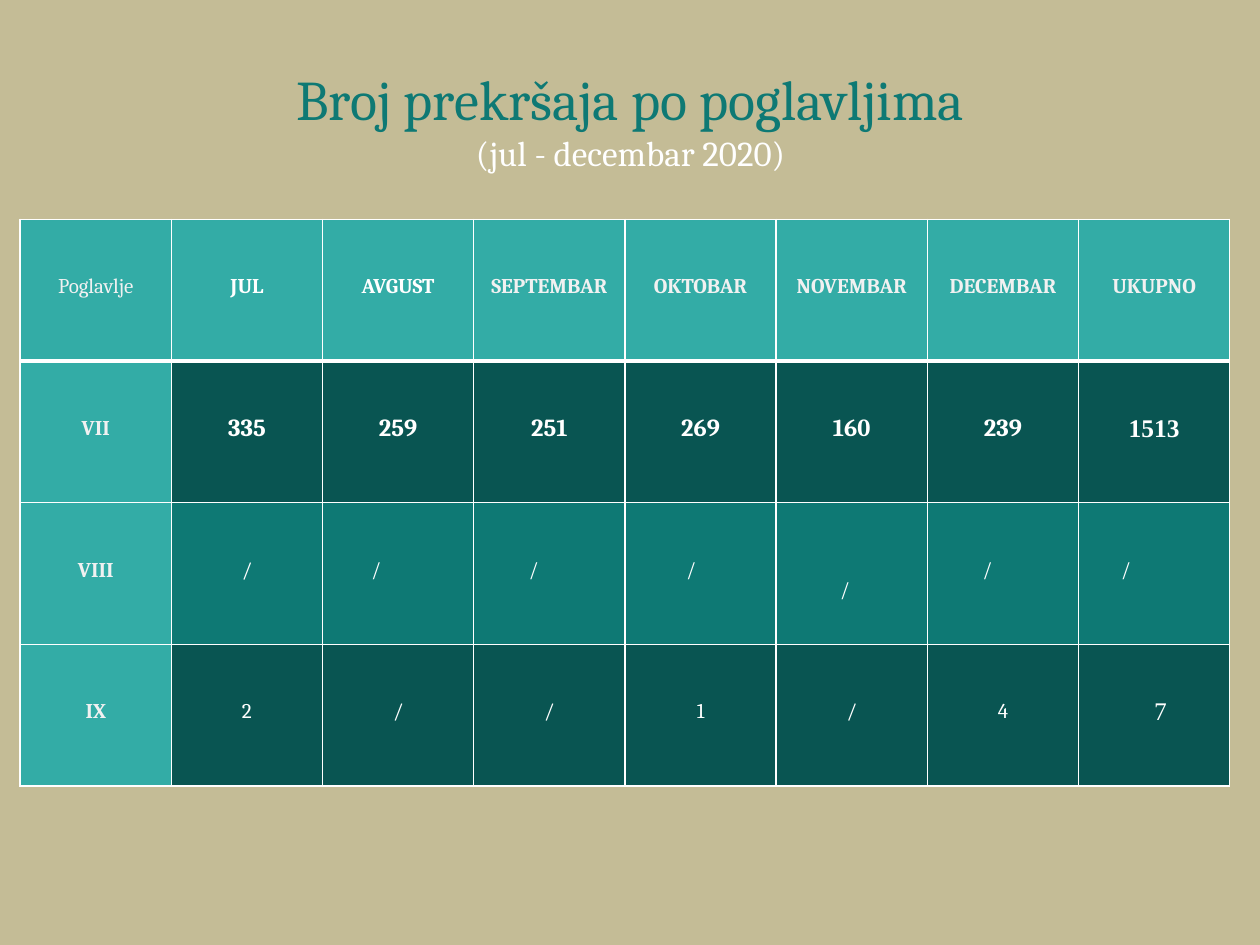
"""Build the slide with the number of offences by chapter, July to December 2020."""
from lxml import etree
from pptx import Presentation
from pptx.dml.color import RGBColor
from pptx.enum.text import MSO_ANCHOR, MSO_AUTO_SIZE, PP_ALIGN
from pptx.oxml.ns import qn
from pptx.util import Inches, Pt

CENTER, LEFT = PP_ALIGN.CENTER, PP_ALIGN.LEFT
TOP, MIDDLE = MSO_ANCHOR.TOP, MSO_ANCHOR.MIDDLE
TITLE_ONLY = 5

COLORS = {
    "sand": "C4BC96",
    "teal": "0E7974",
    "dark": "095552",
    "light": "33ACA6",
    "white": "FFFFFF",
    "soft": "F1F1F1",
}
HEADER = ["Poglavlje", "JUL", "AVGUST", "SEPTEMBAR", "OKTOBAR",
          "NOVEMBAR", "DECEMBAR", "UKUPNO"]
CHAPTERS = [
    ["VII", "335", "259", "251", "269", "160", "239", "1513"],
    ["VIII", "/", "/", "/", "/", "/", "/", "/"],
    ["IX", "2", "/", "/", "1", "/", "4", "7"],
]
BODY_FILLS = ["dark", "teal", "dark"]
INDENTS = {(2, 2): 0.4, (2, 3): 0.45, (2, 4): 0.5, (2, 5): 0.52,
           (2, 6): 0.45, (2, 7): 0.35, (3, 7): 0.6}
DROPS = {(2, 5): 0.33}


def rgb(name):
    return RGBColor.from_string(COLORS[name])


def write(paragraph, text, color, align=CENTER, **font_values):
    """Put formatted text into a paragraph."""
    paragraph.alignment = align
    run = paragraph.add_run()
    run.text = text
    run.font.color.rgb = rgb(color)
    for name, value in font_values.items():
        setattr(run.font, name, value)


def add_title(slide):
    """Place the heading and the period below it."""
    title = slide.shapes.title
    place = {"left": 2.2, "top": 0.5, "width": 5.61, "height": 0.9}
    for name, value in place.items():
        setattr(title, name, Inches(value))
    frame = title.text_frame
    layout = {"margin_left": 0, "margin_right": 0, "margin_top": Inches(0.01),
              "margin_bottom": 0, "vertical_anchor": TOP, "word_wrap": True,
              "auto_size": MSO_AUTO_SIZE.NONE}
    for name, value in layout.items():
        setattr(frame, name, value)
    write(frame.paragraphs[0], "Broj prekršaja po poglavljima", "teal",
          name="Cambria", size=Pt(32))
    write(frame.add_paragraph(), "(jul - decembar 2020)", "white",
          name="Cambria", size=Pt(20))


def set_borders(cell, row):
    """Rule the cell in white, heavier under the header row."""
    widths = {"a:lnL": 1, "a:lnR": 1, "a:lnT": 3 if row == 1 else 1,
              "a:lnB": 3 if row == 0 else 1}
    properties = cell._tc.get_or_add_tcPr()
    for tag, width in widths.items():
        line = etree.SubElement(properties, qn(tag), w=str(Pt(width)))
        fill = etree.SubElement(line, qn("a:solidFill"))
        etree.SubElement(fill, qn("a:srgbClr"), val=COLORS["white"])


def font_for(row, column):
    """Choose the font values for a place in the table."""
    if (row, column) == (1, 7) or (row, column) in INDENTS:
        return {"name": "Times New Roman", "size": Pt(14.5), "bold": row == 1}
    if row == 1 and column > 0:
        return {"name": "Cambria", "size": Pt(14), "bold": True}
    labels = (row == 0) != (column == 0)
    return {"name": "Cambria", "size": Pt(12), "bold": labels}


def fill_cell(cell, text, row, column):
    """Format one table cell and write its value."""
    set_borders(cell, row)
    label = row == 0 or column == 0
    cell.fill.solid()
    cell.fill.fore_color.rgb = rgb("light" if label else BODY_FILLS[row - 1])
    indent = INDENTS.get((row, column), 0)
    layout = {"margin_left": Inches(indent), "margin_right": 0,
              "margin_top": Inches(DROPS.get((row, column), 0)),
              "margin_bottom": Inches(0.05), "vertical_anchor": MIDDLE}
    for name, value in layout.items():
        setattr(cell, name, value)
    soft = label and not (row == 0 and column in (1, 2))
    write(cell.text_frame.paragraphs[0], text, "soft" if soft else "white",
          LEFT if indent else CENTER, **font_for(row, column))


def add_counts(slide):
    """Add the table of counts by chapter and month."""
    rows = [HEADER] + CHAPTERS
    table = slide.shapes.add_table(
        len(rows), len(HEADER),
        Inches(0.16), Inches(1.74), Inches(9.6), Inches(4.5)).table
    table.first_row = table.horz_banding = False
    for row, values in enumerate(rows):
        for column, text in enumerate(values):
            fill_cell(table.cell(row, column), text, row, column)


def main():
    deck = Presentation()
    deck.slide_width, deck.slide_height = Inches(10), Inches(7.5)
    slide = deck.slides.add_slide(deck.slide_layouts[TITLE_ONLY])
    slide.background.fill.solid()
    slide.background.fill.fore_color.rgb = rgb("sand")
    add_title(slide)
    add_counts(slide)
    deck.save("out.pptx")


if __name__ == "__main__":
    main()
